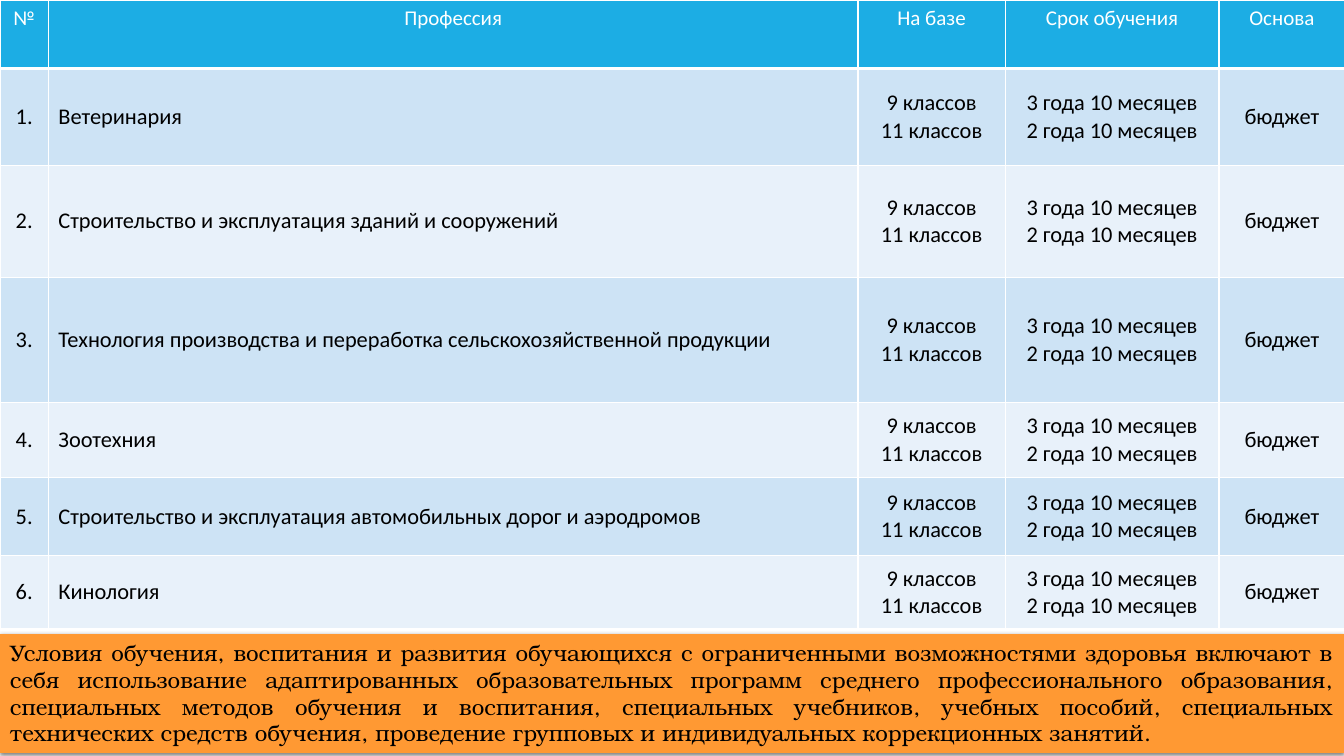
from lxml.etree import SubElement
from pptx import Presentation
from pptx.dml.color import RGBColor
from pptx.enum.shapes import MSO_SHAPE
from pptx.enum.text import MSO_ANCHOR as ANCHOR, MSO_AUTO_SIZE as AUTO, PP_ALIGN as ALIGN
from pptx.oxml.ns import qn
from pptx.util import Inches, Pt

WHITE = RGBColor(0xFF, 0xFF, 0xFF)
BLACK = RGBColor(0, 0, 0)
BLUE = RGBColor(0x1C, 0xAD, 0xE4)
BANDS = [RGBColor(0xE8, 0xF1, 0xFA), RGBColor(0xCD, 0xE3, 0xF5)]
ORANGE = RGBColor(0xFF, 0x99, 0x33)

COLS = [0.48, 8.03, 1.46, 2.12, 1.25]
ROWS = [0.68, 0.96, 1.11, 1.24, 0.75, 0.77, 0.73]
HEADER = ["№", "Профессия", "На базе", "Срок обучения", "Основа"]
PROFESSIONS = [
    "Ветеринария",
    "Строительство и эксплуатация зданий и сооружений",
    "Технология производства и переработка сельскохозяйственной продукции",
    "Зоотехния",
    "Строительство и эксплуатация автомобильных дорог и аэродромов",
    "Кинология",
]
BASE = "9 классов\n11 классов"
TERM = "3 года 10 месяцев\n2 года 10 месяцев"
CONDITIONS = (
    "Условия обучения, воспитания и развития обучающихся с ограниченными "
    "возможностями здоровья включают в себя использование адаптированных "
    "образовательных программ среднего профессионального образования, "
    "специальных методов обучения и воспитания, специальных учебников, "
    "учебных пособий, специальных технических средств обучения, проведение "
    "групповых и индивидуальных коррекционных занятий."
)


def add_text(tf, text, font, size, color, align):
    for i, line in enumerate(text.split("\n")):
        p = tf.add_paragraph() if i else tf.paragraphs[0]
        p.alignment = align
        r = p.add_run()
        r.text = line
        r.font.name = font
        r.font.size = Pt(size)
        r.font.color.rgb = color


def add_borders(cell, bottom):
    tcPr = cell._tc.get_or_add_tcPr()
    for i, (side, width) in enumerate([("L", 1), ("R", 1), ("T", 1), ("B", bottom)]):
        ln = SubElement(tcPr, qn("a:ln" + side), w=str(Pt(width)))
        fill = SubElement(ln, qn("a:solidFill"))
        SubElement(fill, qn("a:srgbClr"), val=str(WHITE))
        tcPr.insert(i, ln)


prs = Presentation()
prs.slide_width = Inches(13.33)
prs.slide_height = Inches(7.5)
s = prs.slides.add_slide(prs.slide_layouts[6])

table = s.shapes.add_table(len(ROWS), len(COLS), 0, 0, prs.slide_width, Inches(sum(ROWS))).table
for col, width in zip(table.columns, COLS):
    col.width = Inches(width)
for row, height in zip(table.rows, ROWS):
    row.height = Inches(height)

data = [HEADER] + [[f"{n}.", name, BASE, TERM, "бюджет"] for n, name in enumerate(PROFESSIONS, 1)]
for i, values in enumerate(data):
    head = i == 0
    for j, value in enumerate(values):
        cell = table.cell(i, j)
        cell.fill.solid()
        cell.fill.fore_color.rgb = BLUE if head else BANDS[i % 2]
        cell.vertical_anchor = ANCHOR.TOP if head else ANCHOR.MIDDLE
        align = ALIGN.LEFT if j == 1 and not head else ALIGN.CENTER
        add_text(cell.text_frame, value, "Calibri", 15 if head else 16, WHITE if head else BLACK, align)
        for p in cell.text_frame.paragraphs:
            p.runs[0].font.bold = False
        add_borders(cell, 3 if head else 1)

sp = s.shapes.add_shape(MSO_SHAPE.RECTANGLE, 0, Inches(6.29), prs.slide_width, Inches(1.18))
sp.fill.solid()
sp.fill.fore_color.rgb = ORANGE
sp.line.fill.background()
sp.shadow.inherit = False
effects = sp._element.spPr.find(qn("a:effectLst"))
shadow = SubElement(effects, qn("a:outerShdw"), blurRad=str(Pt(3.5)), dist=str(Pt(1.1)),
                    dir="5400000", rotWithShape="0")
shade = SubElement(shadow, qn("a:srgbClr"), val=str(BLACK))
SubElement(shade, qn("a:alpha"), val="45000")
tf = sp.text_frame
tf.word_wrap = True
tf.auto_size = AUTO.SHAPE_TO_FIT_TEXT
tf.vertical_anchor = ANCHOR.TOP
add_text(tf, CONDITIONS, "TeX Gyre Bonum", 16, BLACK, ALIGN.JUSTIFY)

prs.save("out.pptx")
